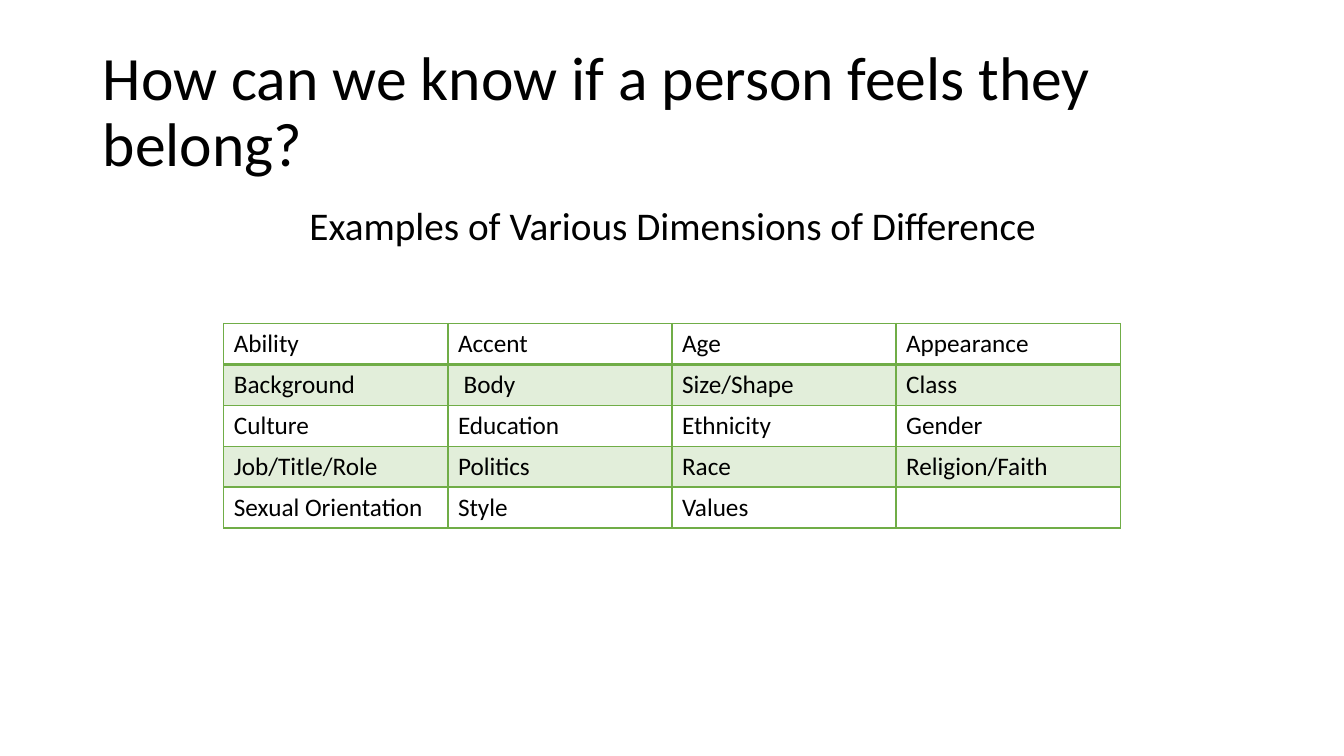
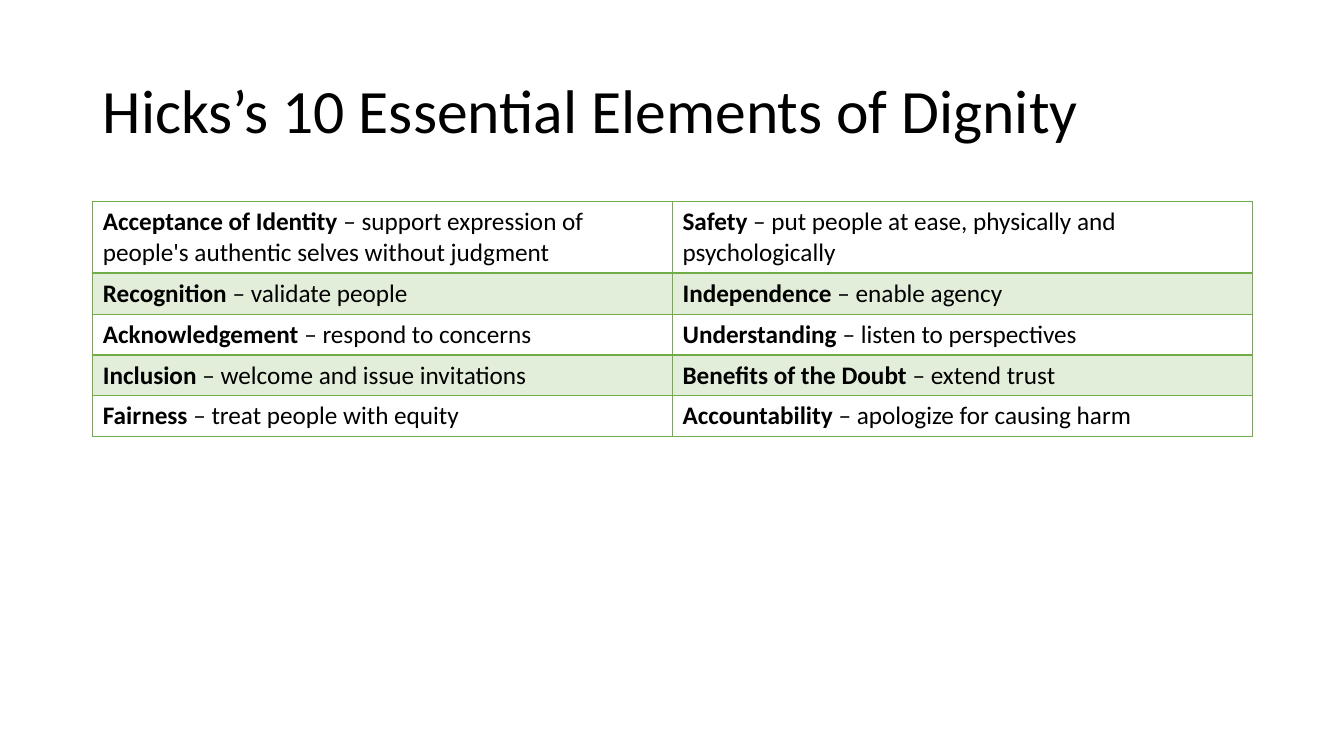
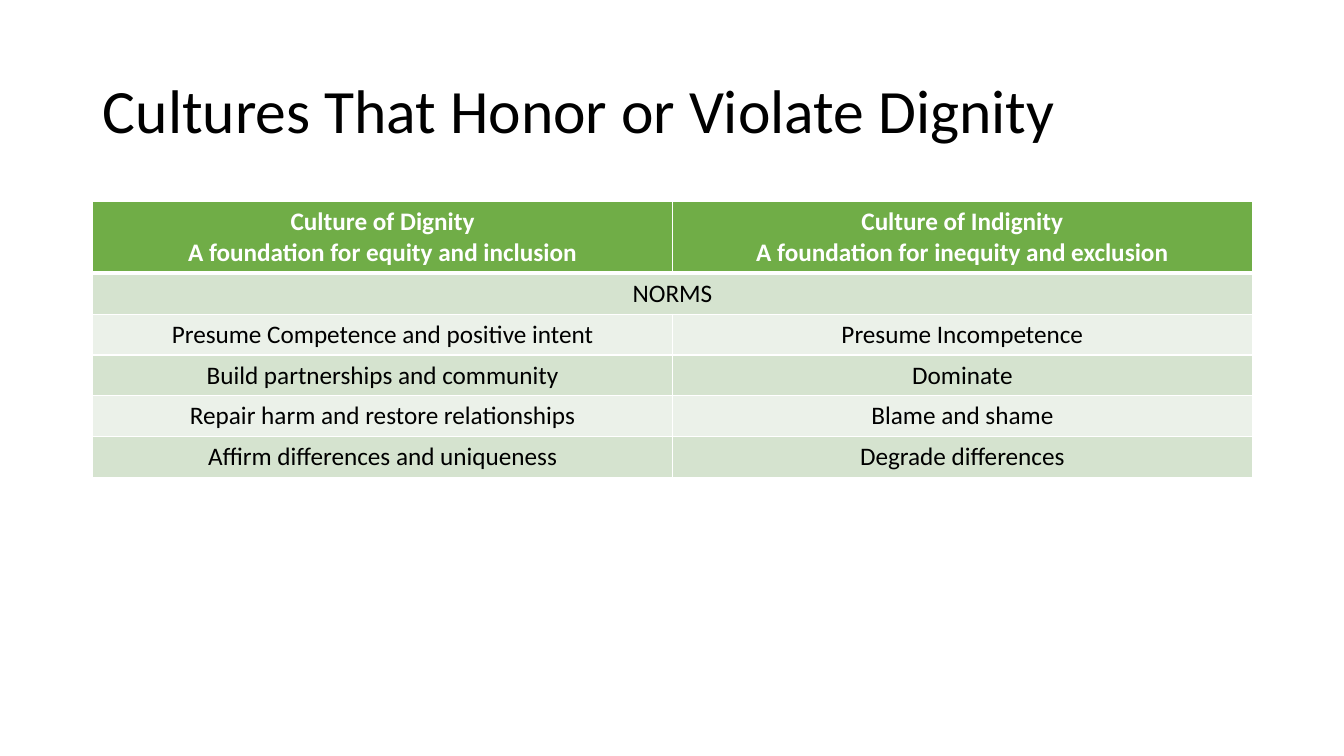
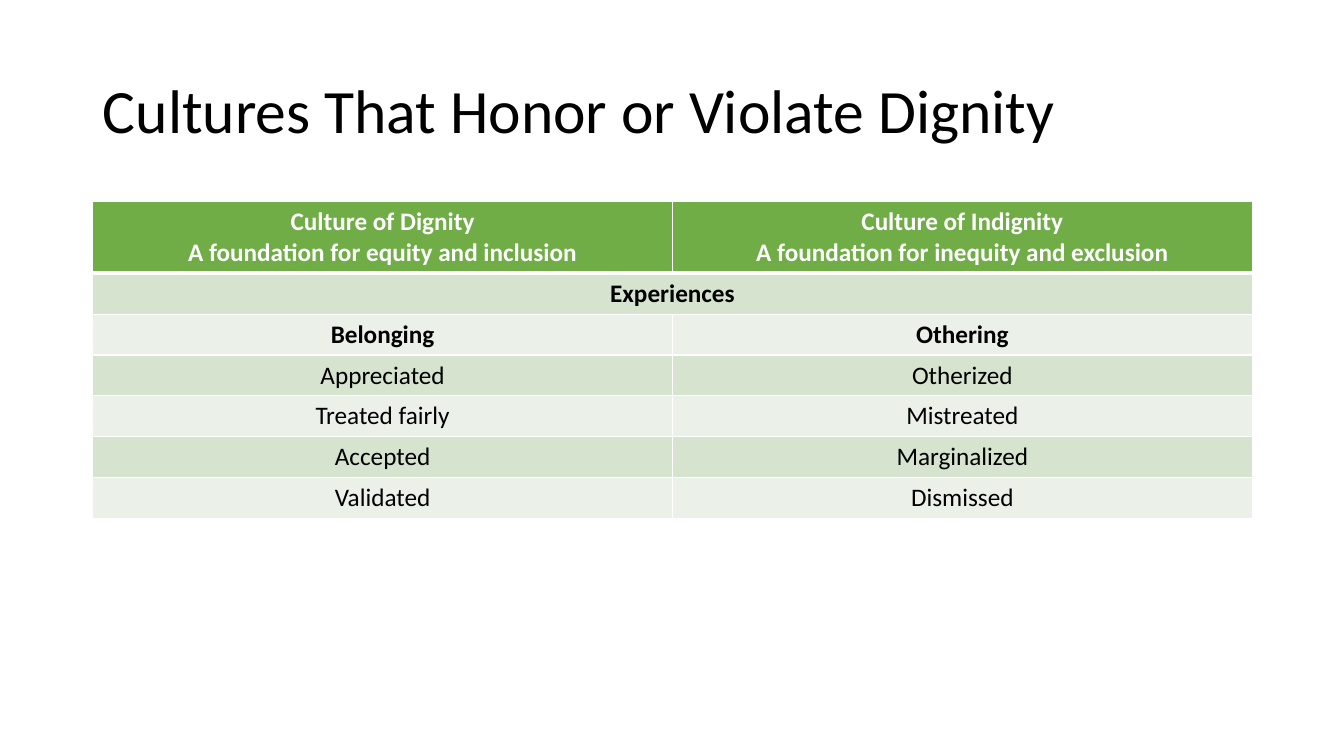
from lxml.etree import SubElement
from pptx import Presentation
from pptx.dml.color import RGBColor
from pptx.enum.text import MSO_ANCHOR, MSO_AUTO_SIZE, PP_ALIGN
from pptx.oxml.ns import qn
from pptx.util import Inches, Pt

FONT = "Calibri"
COLORS = {
    "black": "000000",
    "white": "FFFFFF",
    "green": "70AD47",
    "dark band": "D5E3CF",
    "light band": "EBF1E9",
}
TITLE_ONLY, TITLE_AND_BODY = 5, 1
LEFT, WIDTH = 0.92, 11.5
ROW_HEIGHT, TALL_ROW_HEIGHT = 0.4, 0.7
DASH = " – "


def write(frame, text, *, size=18, color="black", bold=False, bold_term=False,
          align=PP_ALIGN.LEFT, line_spacing=1.0, space_before=0):
    """Fill a text frame, one paragraph per line; bold_term bolds what precedes the dash."""
    for number, line in enumerate(text.split("\n")):
        paragraph = frame.paragraphs[0] if number == 0 else frame.add_paragraph()
        paragraph.alignment = align
        paragraph.line_spacing = line_spacing
        paragraph.space_before = Pt(space_before)
        term, dash, meaning = line.partition(DASH)
        parts = [(term, True), (dash + meaning, False)] if bold_term else [(line, bold)]
        for part, is_bold in parts:
            if part:
                run = paragraph.add_run()
                run.text = part
                run.font.name = FONT
                run.font.size = Pt(size)
                run.font.bold = is_bold
                run.font.color.rgb = RGBColor.from_string(COLORS[color])


def style_cell(cell, border, top, bottom, fill=None, opacity=100):
    """Draw the four borders (widths in points), then the fill that must follow them."""
    properties = cell._tc.get_or_add_tcPr()
    for side, width in (("L", 1), ("R", 1), ("T", top), ("B", bottom)):
        line = SubElement(properties, qn(f"a:ln{side}"), w=str(Pt(width)))
        SubElement(SubElement(line, qn("a:solidFill")), qn("a:srgbClr"), val=COLORS[border])
    if fill is None:
        cell.fill.background()
        return
    cell.fill.solid()
    cell.fill.fore_color.rgb = RGBColor.from_string(COLORS[fill])
    if opacity < 100:
        color = properties.find(qn("a:solidFill")).find(qn("a:srgbClr"))
        SubElement(color, qn("a:alpha"), val=str(opacity * 1000))


CULTURE_HEADER = [
    "Culture of Dignity\nA foundation for equity and inclusion",
    "Culture of Indignity\nA foundation for inequity and exclusion",
]

slides = [
    {
        "title": "How can we know if a person feels they belong?",
        "body": "Examples of Various Dimensions of Difference",
        "place": (2.22, 3.21, 8.89),
        "rows": [
            ["Ability", "Accent", "Age", "Appearance"],
            ["Background", " Body", "Size/Shape", "Class"],
            ["Culture", "Education", "Ethnicity", "Gender"],
            ["Job/Title/Role", "Politics", "Race", "Religion/Faith"],
            ["Sexual Orientation", "Style", "Values", ""],
        ],
    },
    {
        "title": "Hicks’s 10 Essential Elements of Dignity",
        "tall_header": True,
        "bold_term": True,
        "rows": [
            ["Acceptance of Identity – support expression of people's authentic selves without judgment",
             "Safety – put people at ease, physically and psychologically"],
            ["Recognition – validate people", "Independence – enable agency"],
            ["Acknowledgement – respond to concerns", "Understanding – listen to perspectives"],
            ["Inclusion – welcome and issue invitations", "Benefits of the Doubt – extend trust"],
            ["Fairness – treat people with equity", "Accountability – apologize for causing harm"],
        ],
    },
    {
        "title": "Cultures That Honor or Violate Dignity",
        "tall_header": True,
        "filled": True,
        "bold_rows": [0],
        "rows": [
            CULTURE_HEADER,
            ["NORMS"],
            ["Presume Competence and positive intent", "Presume Incompetence"],
            ["Build partnerships and community", "Dominate"],
            ["Repair harm and restore relationships", "Blame and shame"],
            ["Affirm differences and uniqueness", "Degrade differences"],
        ],
    },
    {
        "title": "Cultures That Honor or Violate Dignity",
        "tall_header": True,
        "filled": True,
        "bold_rows": [0, 1, 2],
        "rows": [
            CULTURE_HEADER,
            ["Experiences"],
            ["Belonging", "Othering"],
            ["Appreciated", "Otherized"],
            ["Treated fairly", "Mistreated"],
            ["Accepted", "Marginalized"],
            ["Validated", "Dismissed"],
        ],
    },
]

presentation = Presentation()
presentation.slide_width = Inches(13.33)
presentation.slide_height = Inches(7.5)

# Both layouts inherit the place of the title from the master.
master_title = presentation.slide_master.placeholders[0]
master_title.left, master_title.top = Inches(LEFT), Inches(0.4)
master_title.width, master_title.height = Inches(WIDTH), Inches(1.45)
master_title.text_frame.vertical_anchor = MSO_ANCHOR.MIDDLE
master_title.text_frame.auto_size = MSO_AUTO_SIZE.NONE

for content in slides:
    layout = TITLE_AND_BODY if "body" in content else TITLE_ONLY
    slide = presentation.slides.add_slide(presentation.slide_layouts[layout])
    write(slide.shapes.title.text_frame, content["title"], size=44, line_spacing=0.9)

    if "body" in content:
        body = slide.placeholders[1]
        body.left, body.top = Inches(LEFT), Inches(2)
        body.width, body.height = Inches(WIDTH), Inches(4.76)
        body.text_frame.auto_size = MSO_AUTO_SIZE.NONE
        write(body.text_frame, content["body"], size=28, align=PP_ALIGN.CENTER,
              line_spacing=0.9, space_before=10)
        properties = body.text_frame.paragraphs[0]._p.get_or_add_pPr()
        properties.set("marL", "0")
        properties.set("indent", "0")
        SubElement(properties, qn("a:buNone"))

    rows = content["rows"]
    filled = content.get("filled", False)
    left, top, width = content.get("place", (LEFT, 2, WIDTH))
    heights = [ROW_HEIGHT] * len(rows)
    if content.get("tall_header"):
        heights[0] = TALL_ROW_HEIGHT
    column_count = len(rows[0])
    table = slide.shapes.add_table(len(rows), column_count, Inches(left), Inches(top),
                                   Inches(width), Inches(sum(heights))).table
    table.first_row = False
    table.horz_banding = False

    border = "white" if filled else "green"
    header_rule = 3 if filled else 2
    for row_number, texts in enumerate(rows):
        table.rows[row_number].height = Inches(heights[row_number])
        is_header, is_odd = row_number == 0, row_number % 2 == 1
        if filled:
            fill = "green" if is_header else "dark band" if is_odd else "light band"
        else:
            fill = "green" if is_odd else None
        for column_number in range(column_count):
            style_cell(table.cell(row_number, column_number), border,
                       top=header_rule if row_number == 1 else 1,
                       bottom=header_rule if is_header else 1,
                       fill=fill, opacity=100 if filled else 20)
        for column_number, text in enumerate(texts):
            write(table.cell(row_number, column_number).text_frame, text,
                  color="white" if filled and is_header else "black",
                  bold=row_number in content.get("bold_rows", []),
                  bold_term=content.get("bold_term", False),
                  align=PP_ALIGN.CENTER if filled else PP_ALIGN.LEFT)
        if len(texts) == 1:
            table.cell(row_number, 0).merge(table.cell(row_number, column_count - 1))

presentation.save("out.pptx")
